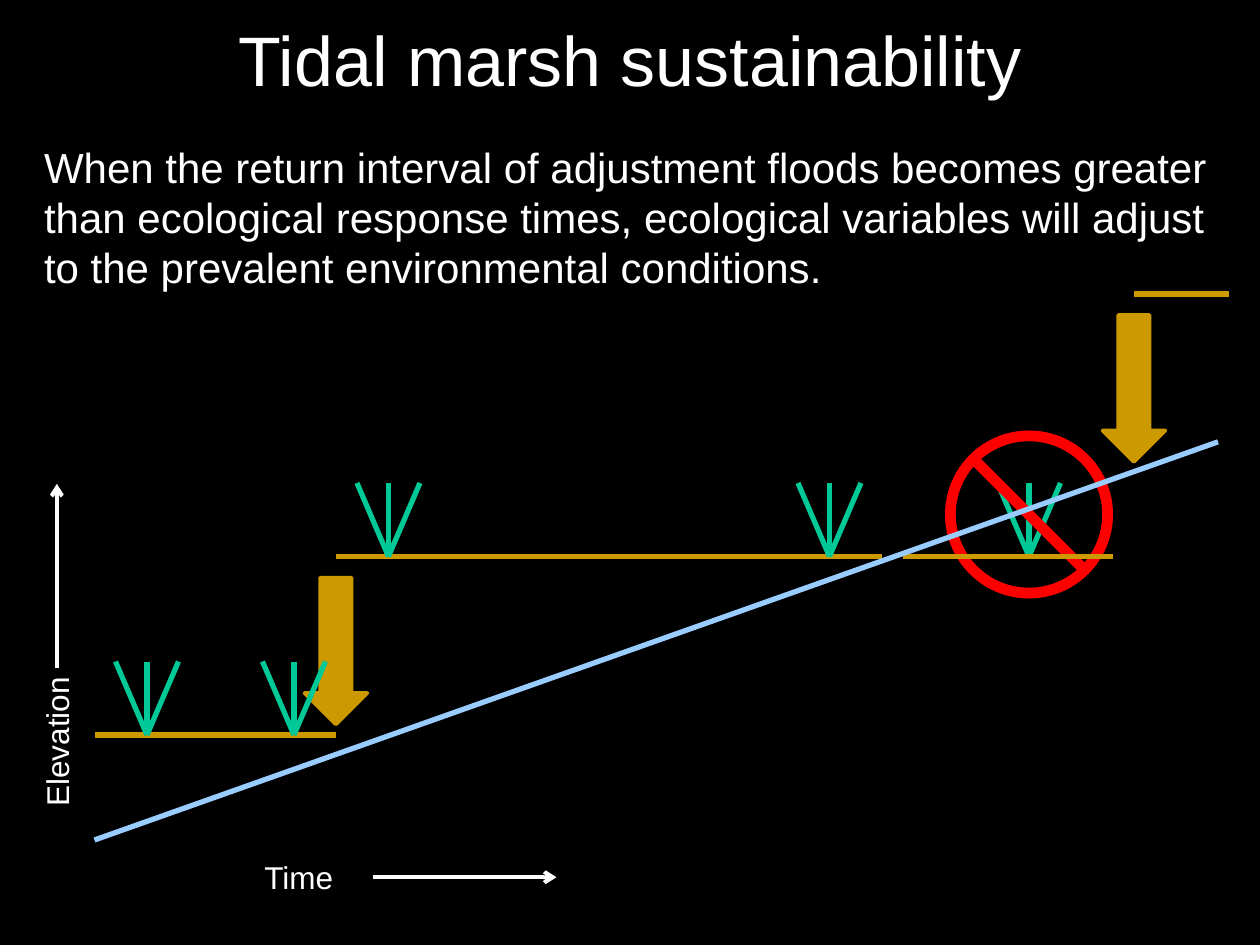
from pptx import Presentation
from pptx.dml.color import RGBColor
from pptx.enum.shapes import MSO_CONNECTOR, MSO_SHAPE
from pptx.enum.text import MSO_ANCHOR, MSO_AUTO_SIZE, PP_ALIGN
from pptx.oxml.ns import qn
from pptx.util import Pt
from lxml.etree import SubElement

THEME = {
    "font": "Arial",
    "background": "000000", "text": "FFFFFF", "plant": "00C896",
    "marsh": "CC9900", "sea": "99CCFF", "ban": "FF0000",
    "title": 40, "body": 24, "label": 18,
    "line": 3, "axis": 2.25, "outline": 2,
}

TITLE = "Tidal marsh sustainability"
BODY = ("When the return interval of adjustment floods becomes greater than "
        "ecological response times, ecological variables will adjust to the "
        "prevalent environmental conditions.")

LOW, HIGH, TOP = 420, 318, 168  # marsh surface levels
MARSHES = [(54, 192, LOW), (192, 246, HIGH), (246, 504, HIGH),
           (516, 636, HIGH), (648, 702, TOP)]  # from x, to x, level
LOST_PLANT = (588, HIGH)
PLANTS = [(222, HIGH), (474, HIGH), (84, LOW), (168, LOW)]
PLANT_HEIGHT, PLANT_SPREAD = 42, 18
FLOODS = [(192, HIGH), (648, TOP)]  # arrow centre, level above it
FLOOD_WIDTH, FLOOD_HEIGHT, FLOOD_GAP = 36, 84, 12
BAN_SIZE = 96
SEA_LEVEL = (54, 480, 696, 252.5)
AXES = [
    ("Time", (144, 486.5, 54, 29), 0, (213, 501.3, 318, 501.3)),
    ("Elevation", (-12, 409, 89, 29), 270, (32.5, 381.5, 32.5, 276.5)),
]


def color(name):
    return RGBColor.from_string(THEME[name])


def place(shape, left, top, width, height):
    shape.left, shape.top, shape.width, shape.height = map(
        Pt, (left, top, width, height))


def set_text(shape, text, size, align=PP_ALIGN.LEFT, wrap=True):
    tf = shape.text_frame
    tf.word_wrap = wrap
    tf.auto_size = MSO_AUTO_SIZE.SHAPE_TO_FIT_TEXT
    tf.vertical_anchor = MSO_ANCHOR.TOP
    p = tf.paragraphs[0]
    p.alignment = align
    p.space_before = Pt(0)
    r = p.add_run()
    r.text = text
    r.font.name = THEME["font"]
    r.font.size = Pt(THEME[size])
    r.font.color.rgb = color("text")
    return p


def add_line(s, x1, y1, x2, y2, fill, width="line", arrow=False):
    line = s.shapes.add_connector(
        MSO_CONNECTOR.STRAIGHT, Pt(x1), Pt(y1), Pt(x2), Pt(y2))
    line.line.color.rgb = color(fill)
    line.line.width = Pt(THEME[width])
    sp_pr = line._element.spPr
    if arrow:
        SubElement(sp_pr.find(qn("a:ln")), qn("a:tailEnd"), type="arrow")
    SubElement(sp_pr, qn("a:effectLst"))


def add_plant(s, x, ground):
    for dx in (0, -PLANT_SPREAD, PLANT_SPREAD):
        add_line(s, x + dx, ground - PLANT_HEIGHT, x, ground, "plant")


def add_shape(s, kind, left, top, width, height, fill, outlined=False):
    sp = s.shapes.add_shape(kind, Pt(left), Pt(top), Pt(width), Pt(height))
    sp.shadow.inherit = False
    sp.fill.solid()
    sp.fill.fore_color.rgb = color(fill)
    if outlined:
        sp.line.color.rgb = color(fill)
        sp.line.width = Pt(THEME["outline"])
    else:
        sp.line.fill.background()
    return sp


def main():
    prs = Presentation()
    prs.slide_width, prs.slide_height = Pt(720), Pt(540)
    s = prs.slides.add_slide(prs.slide_layouts[1])
    s.background.fill.solid()
    s.background.fill.fore_color.rgb = color("background")

    title, body = s.placeholders
    place(title, 0, 6, 720, 55.5)
    set_text(title, TITLE, "title", PP_ALIGN.CENTER)
    place(body, 18, 77, 684, 94.5)
    p_pr = set_text(body, BODY, "body")._p.get_or_add_pPr()
    p_pr.set("marL", "0")
    p_pr.set("indent", "0")
    SubElement(p_pr, qn("a:buNone"))

    add_plant(s, *LOST_PLANT)
    x, ground = LOST_PLANT
    ban = add_shape(s, MSO_SHAPE.NO_SYMBOL, x - BAN_SIZE / 2,
                    ground - BAN_SIZE * 0.75, BAN_SIZE, BAN_SIZE, "ban")
    ban.adjustments[0] = 0.064

    for x, level in FLOODS:
        add_shape(s, MSO_SHAPE.DOWN_ARROW, x - FLOOD_WIDTH / 2,
                  level + FLOOD_GAP, FLOOD_WIDTH, FLOOD_HEIGHT, "marsh", True)
    for x1, x2, level in MARSHES:
        add_line(s, x1, level, x2, level, "marsh")
    for x, ground in PLANTS:
        add_plant(s, x, ground)
    add_line(s, *SEA_LEVEL, "sea")

    for text, box, rotation, arrow in AXES:
        label = s.shapes.add_textbox(*map(Pt, box))
        label.rotation = rotation
        set_text(label, text, "label", wrap=False)
        add_line(s, *arrow, "text", "axis", arrow=True)

    prs.save("out.pptx")


if __name__ == "__main__":
    main()
